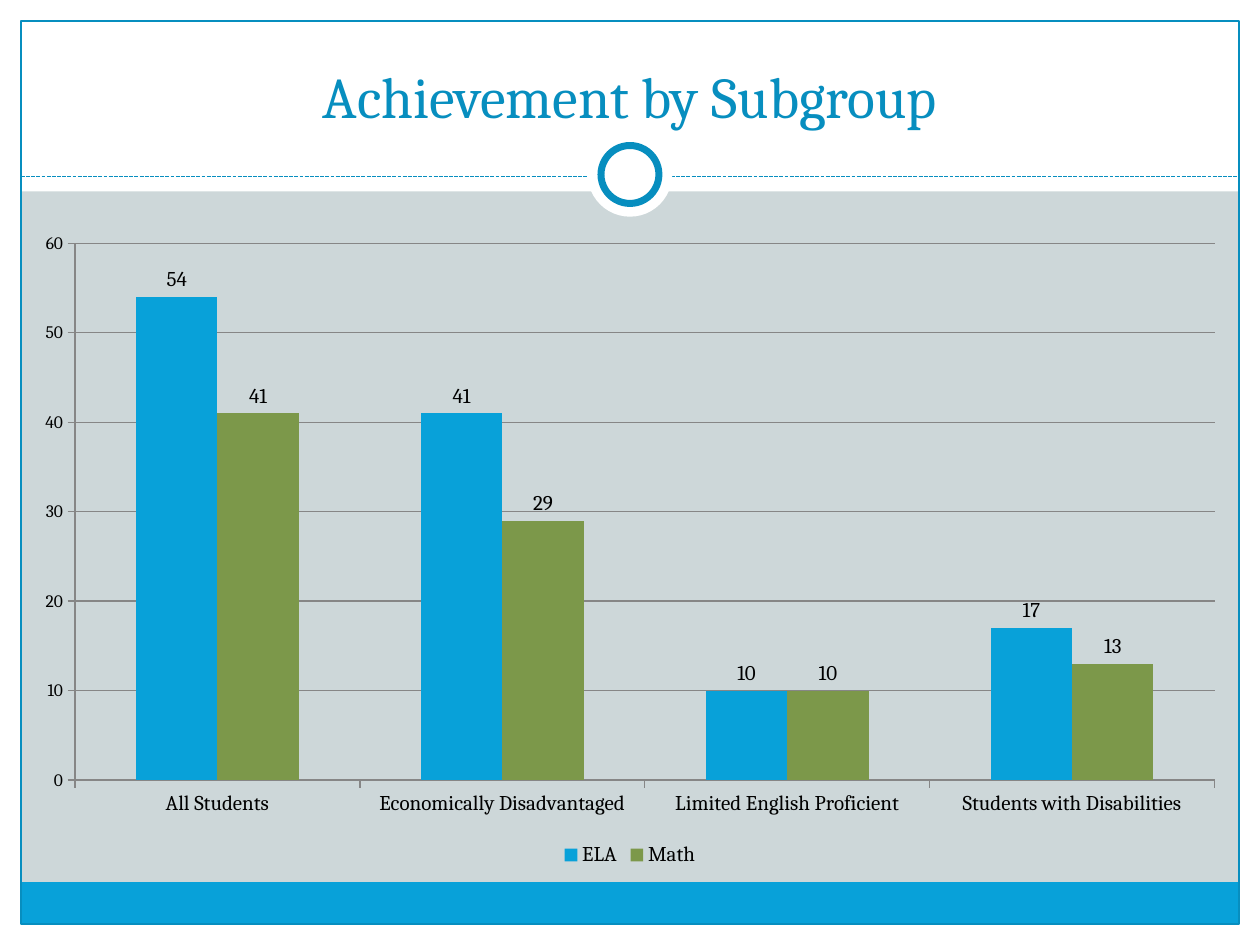
from pptx import Presentation
from pptx import util as u
from pptx.chart.data import CategoryChartData
from pptx.dml.color import RGBColor
from pptx.enum import chart as ch, dml, shapes, text
from pptx.oxml.ns import qn
from lxml import etree

WIDTH, HEIGHT = 10, 7.5
MARGIN = WIDTH / 60
HEADER = 1.52
RULE_Y = 1.4
WHITE, BLUE, DARK_BLUE, GREEN = "FFFFFF", "08A1D9", "078EBF", "7C984A"
GRAY, BACKGROUND, BLACK = "868686", "CDD7D9", "000000"
FONT = "Cambria"


def color(hex_text):
    return RGBColor.from_string(hex_text)


def inches(*lengths):
    return [u.Inches(length) for length in lengths]


def set_font(font, size, hex_text=BLACK):
    for name, value in {"name": FONT, "size": u.Pt(size), "bold": False}.items():
        setattr(font, name, value)
    font.color.rgb = color(hex_text)


def set_line(line, hex_text, width=0.75):
    line.color.rgb = color(hex_text)
    line.width = u.Pt(width)


def add_part(page, kind, box, fill=None, line=None, width=0.75):
    part = page.shapes.add_shape(kind, *inches(*box))
    part.shadow.inherit = False
    if fill:
        part.fill.solid()
        part.fill.fore_color.rgb = color(fill)
    else:
        part.fill.background()
    if line:
        set_line(part.line, line, width)
    else:
        part.line.fill.background()
    return part


def add_frame(page, box):
    """White margins and header, blue footer band and thin outline."""
    left, top, width, height = box
    rect = shapes.MSO_SHAPE.RECTANGLE
    margins = [
        (left, top + height - MARGIN, width, MARGIN),
        (left, top, width, HEADER),
        (left, top, MARGIN, height),
        (left + width - MARGIN, top, MARGIN, height),
    ]
    for margin in margins:
        add_part(page, rect, margin, WHITE)
    inner = width - 2 * MARGIN
    add_part(page, rect, (left + MARGIN, top + height - 3 * MARGIN, inner, 2 * MARGIN), BLUE)
    add_part(page, rect, (left + MARGIN, top + MARGIN, inner, height - 2 * MARGIN),
             line=DARK_BLUE)


def add_divider(page, box):
    """Dashed rule with a ring at the middle of the box."""
    left, top, width, height = box
    rule = page.shapes.add_connector(shapes.MSO_CONNECTOR.STRAIGHT,
                                     *inches(left, RULE_Y, left + width, RULE_Y))
    set_line(rule.line, DARK_BLUE)
    rule.line.dash_style = dml.MSO_LINE.SQUARE_DOT
    properties = rule._element.spPr
    etree.SubElement(properties, qn("a:effectLst"))
    center_x, center_y = left + width / 2, top + height / 2
    for size, line in ((height, None), (height - 0.21, DARK_BLUE)):
        add_part(page, shapes.MSO_SHAPE.OVAL,
                 (center_x - size / 2, center_y - size / 2, size, size), WHITE, line, 4)


def add_title(page, box, words):
    frame = page.shapes.add_textbox(*inches(*box)).text_frame
    frame.word_wrap = True
    frame.vertical_anchor = text.MSO_ANCHOR.BOTTOM
    para = frame.paragraphs[0]
    para.alignment = text.PP_ALIGN.CENTER
    span = para.add_run()
    span.text = words
    set_font(span.font, 33, DARK_BLUE)


def add_achievement_chart(page, box):
    data = CategoryChartData(number_format="0")
    data.categories = ["All Students", "Economically Disadvantaged",
                       "Limited English Proficient", "Students with Disabilities"]
    data.add_series("ELA", (54, 41, 10, 17))
    data.add_series("Math", (41, 29, 10, 13))
    chart = page.shapes.add_chart(ch.XL_CHART_TYPE.COLUMN_CLUSTERED,
                                  *inches(*box), data).chart
    set_font(chart.font, 10)
    chart.has_title = False

    # Legend
    chart.has_legend = True
    chart.legend.position = ch.XL_LEGEND_POSITION.BOTTOM
    chart.legend.include_in_layout = False
    set_font(chart.legend.font, 12)

    # Axes
    for axis, size in ((chart.category_axis, 12), (chart.value_axis, 10)):
        axis.major_tick_mark = ch.XL_TICK_MARK.OUTSIDE
        axis.minor_tick_mark = ch.XL_TICK_MARK.NONE
        set_font(axis.tick_labels.font, size)
        set_line(axis.format.line, GRAY)
    scale = {"minimum_scale": 0, "maximum_scale": 60, "major_unit": 10,
             "has_major_gridlines": True}
    for name, value in scale.items():
        setattr(chart.value_axis, name, value)
    chart.value_axis.tick_labels.number_format = "0"
    chart.value_axis.tick_labels.number_format_is_linked = False
    set_line(chart.value_axis.major_gridlines.format.line, GRAY)

    # Columns and their labels
    plot = chart.plots[0]
    plot.vary_by_categories = False
    plot.gap_width, plot.overlap = 150, 0
    for series, fill in zip(plot.series, (BLUE, GREEN)):
        series.format.fill.solid()
        series.format.fill.fore_color.rgb = color(fill)
        series.invert_if_negative = False
        labels = series.data_labels
        formats = {"show_value": True, "number_format": "0",
                   "number_format_is_linked": False,
                   "position": ch.XL_LABEL_POSITION.OUTSIDE_END}
        for name, value in formats.items():
            setattr(labels, name, value)
        set_font(labels.font, 12)


def main():
    deck = Presentation()
    deck.slide_width, deck.slide_height = inches(WIDTH, HEIGHT)
    page = deck.slides.add_slide(deck.slide_layouts[6])
    page.background.fill.solid()
    page.background.fill.fore_color.rgb = color(BACKGROUND)

    inner = WIDTH - 2 * MARGIN
    add_frame(page, (0, 0, WIDTH, HEIGHT))
    add_divider(page, (MARGIN, 1.05, inner, 0.67))
    add_title(page, (2 * MARGIN, 0.25, WIDTH - 4 * MARGIN, 0.83), "Achievement by Subgroup")
    add_achievement_chart(page, (MARGIN, 1.75, inner, 5.17))
    deck.save("out.pptx")


if __name__ == "__main__":
    main()
